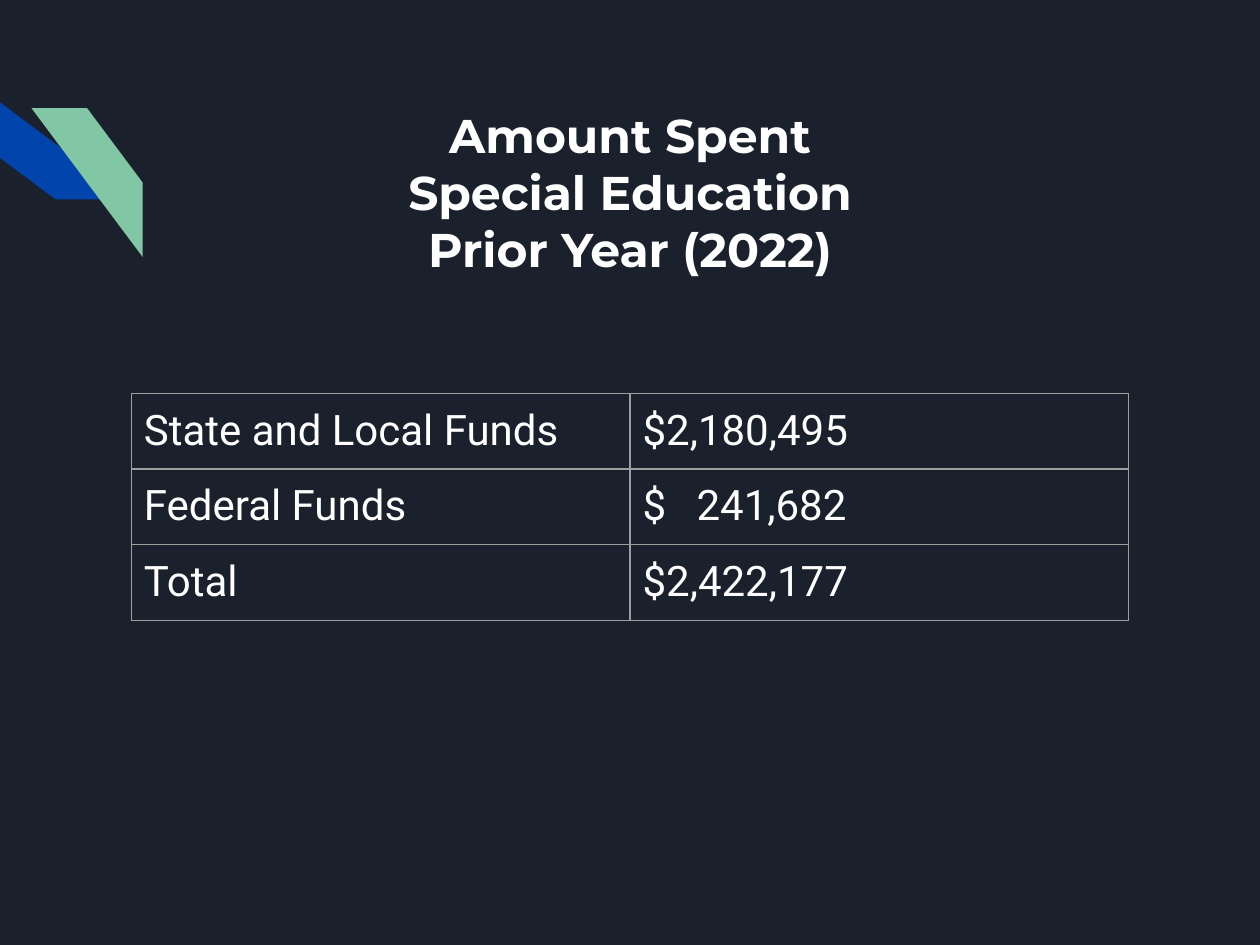
from lxml import etree
from pptx import Presentation
from pptx.dml.color import RGBColor
from pptx.enum import shapes, text
from pptx.oxml.ns import qn
from pptx.util import Pt

FUNDS = [
    ("State and Local Funds", "$2,180,495"),
    ("Federal Funds", "$\t241,682"),
    ("Total", "$2,422,177"),
]
COL_W, ROW_H = 285, 42.65


def color(value):
    return RGBColor.from_string(value)


def format_runs(p, font, size, bold=False):
    for r in p.runs:
        r.font.name = font
        r.font.size = Pt(size)
        r.font.bold = bold
        r.font.color.rgb = color("FFFFFF")


def add_stripe(s, x, y, w, h, rotation, fill):
    """Fill the box x, y, w, h with a stripe given a quarter turn."""
    sp = s.shapes.add_shape(
        shapes.MSO_SHAPE.DIAGONAL_STRIPE,
        Pt(x + (w - h) / 2), Pt(y + (h - w) / 2), Pt(h), Pt(w))
    sp.rotation = rotation
    sp.shadow.inherit = False
    sp.fill.solid()
    sp.fill.fore_color.rgb = color(fill)
    sp.line.fill.background()


def add_title(s, lines):
    tf = s.shapes.add_textbox(Pt(36), Pt(50), Pt(648), Pt(119)).text_frame
    tf.word_wrap = True
    tf.vertical_anchor = text.MSO_ANCHOR.MIDDLE
    tf.text = "\n".join(lines)
    for p in tf.paragraphs:
        p.alignment = text.PP_ALIGN.CENTER
        format_runs(p, "Montserrat", 27, bold=True)
    # A hanging first line moves the top line slightly left of centre
    pPr = tf.paragraphs[0]._p.get_or_add_pPr()
    pPr.set("marL", "0")
    pPr.set("indent", str(Pt(-16)))


def set_borders(cell, line_color, width):
    tcPr = cell._tc.get_or_add_tcPr()
    for i, side in enumerate(("lnL", "lnR", "lnT", "lnB")):
        ln = etree.Element(qn("a:" + side), w=str(Pt(width)))
        fill = etree.SubElement(ln, qn("a:solidFill"))
        etree.SubElement(fill, qn("a:srgbClr"), val=line_color)
        tcPr.insert(i, ln)


def add_right_tab(p, pos):
    tabs = etree.SubElement(p._p.get_or_add_pPr(), qn("a:tabLst"))
    etree.SubElement(tabs, qn("a:tab"), pos=str(Pt(pos)), algn="r")


def fill_cell(cell, value):
    cell.margin_left = cell.margin_right = Pt(7.2)
    cell.margin_top = cell.margin_bottom = Pt(7.2)
    cell.fill.background()
    set_borders(cell, "9E9E9E", 0.75)
    p = cell.text_frame.paragraphs[0]
    p.text = value
    format_runs(p, "Roboto", 24)
    if "\t" in value:
        add_right_tab(p, 116.5)


def add_funds_table(s, rows):
    table = s.shapes.add_table(
        len(rows), 2, Pt(75), Pt(224.8),
        Pt(2 * COL_W), Pt(len(rows) * ROW_H)).table
    table.first_row = table.horz_banding = False
    for row, values in zip(table.rows, rows):
        row.height = Pt(ROW_H)
        for cell, value in zip(row.cells, values):
            fill_cell(cell, value)


def main():
    prs = Presentation()
    prs.slide_width, prs.slide_height = Pt(720), Pt(540)
    s = prs.slides.add_slide(prs.slide_layouts[6])
    s.background.fill.solid()
    s.background.fill.fore_color.rgb = color("1B212C")
    add_stripe(s, -10.8, 50.4, 85, 63.5, 270, "0145AC")
    add_stripe(s, 18, 61.8, 63.5, 85, 90, "82C7A5")
    add_title(s, ["Amount Spent", "Special Education", "Prior Year (2022)"])
    add_funds_table(s, FUNDS)
    prs.save("out.pptx")


if __name__ == "__main__":
    main()
